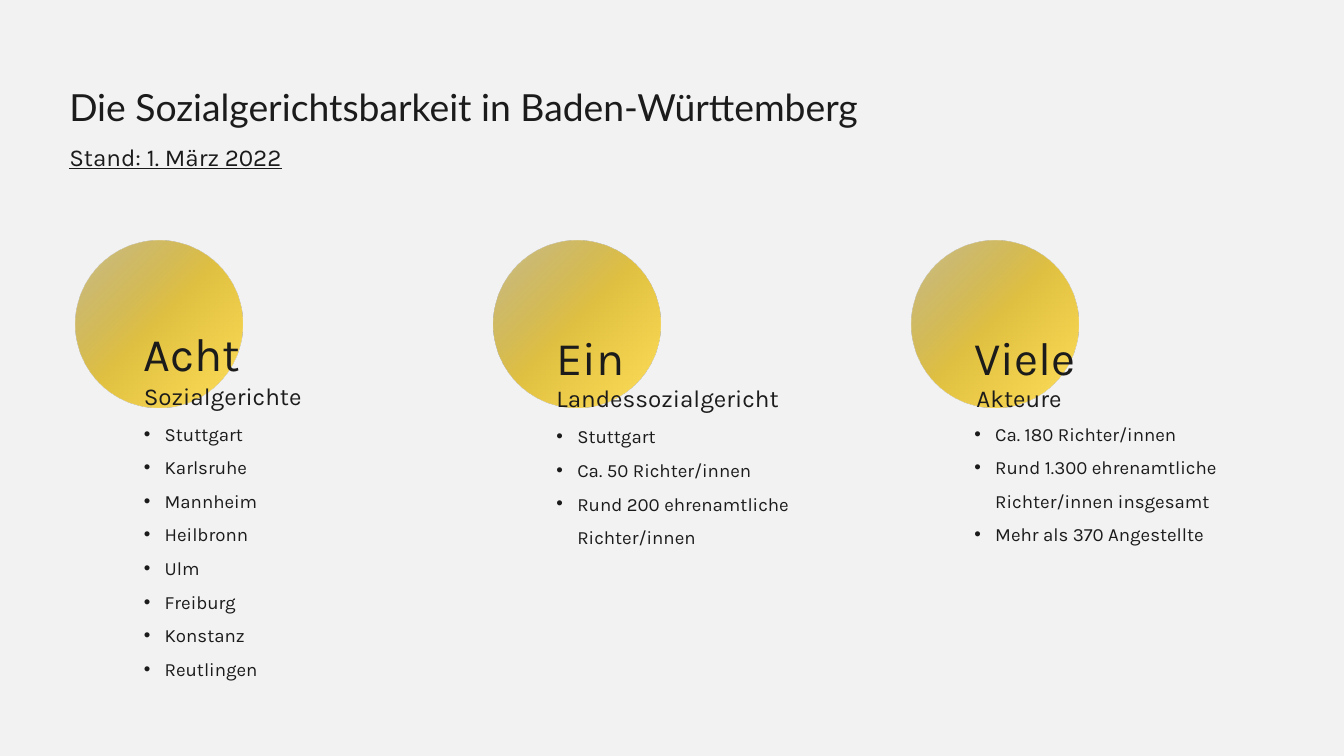
"""Build the slide on the social courts of Baden-Württemberg."""
from lxml import etree
from pptx import Presentation
from pptx.dml.color import RGBColor
from pptx.enum.shapes import MSO_SHAPE
from pptx.enum.text import MSO_ANCHOR, MSO_AUTO_SIZE, PP_ALIGN
from pptx.oxml import parse_xml
from pptx.oxml.ns import nsdecls, qn
from pptx.util import Pt

OVAL = MSO_SHAPE.OVAL
TOP = MSO_ANCHOR.TOP
NO_AUTOFIT = MSO_AUTO_SIZE.NONE
LEFT = PP_ALIGN.LEFT
COMPARISON_LAYOUT = 4
INDENT = 22.3
COLUMN_WIDTH = 273.6
COLUMN_STEP = 448.2

COLUMNS = [
    {"number": ("Acht", 154.1, 348.5), "label": ("Sozialgerichte", 154.1, 405.4),
     "list": (2, 154.1, 440.6, 286.6),
     "items": ["Stuttgart", "Karlsruhe", "Mannheim", "Heilbronn",
               "Ulm", "Freiburg", "Konstanz", "Reutlingen"]},
    {"number": ("Ein", 596.2, 352.8), "label": ("Landessozialgericht", 596.2, 408.2),
     "list": (4, 596.2, 443.5, 145.4),
     "items": ["Stuttgart", "Ca. 50 Richter/innen",
               "Rund 200 ehrenamtliche Richter/innen"]},
    {"number": ("Viele", 1044, 352.8), "label": ("Akteure", 1046.2, 408.2),
     "list": (3, 1044, 440.6, 145.4),
     "items": ["Ca. 180 Richter/innen",
               "Rund 1.300 ehrenamtliche Richter/innen insgesamt",
               "Mehr als 370 Angestellte"]},
]


def color(value):
    return RGBColor.from_string(value)


def write(shape, *texts, size, spacing, font="Karla", underline=False, bullet=False):
    frame = shape.text_frame
    frame.word_wrap = True
    frame.auto_size = NO_AUTOFIT
    frame.vertical_anchor = TOP
    frame.margin_left = frame.margin_top = frame.margin_right = frame.margin_bottom = 0
    for index, text in enumerate(texts):
        paragraph = frame.add_paragraph() if index else frame.paragraphs[0]
        paragraph.alignment = LEFT
        paragraph.line_spacing = spacing
        paragraph.space_before = paragraph.space_after = Pt(0)
        run = paragraph.add_run()
        run.text = text
        run.font.name = font
        run.font.size = Pt(size)
        run.font.bold = False
        run.font.underline = underline
        run.font.color.rgb = color("1B1B1B")
        if bullet:
            properties = paragraph._p.get_or_add_pPr()
            properties.set("marL", str(Pt(INDENT)))
            properties.set("indent", str(-Pt(INDENT)))
            etree.SubElement(properties, qn("a:buFont"), typeface="Arial")
            etree.SubElement(properties, qn("a:buChar"), char="•")


class SlideBuilder:
    def __init__(self, presentation):
        self.slide = presentation.slides.add_slide(
            presentation.slide_layouts[COMPARISON_LAYOUT])
        background = self.slide.background.fill
        background.solid()
        background.fore_color.rgb = color("F2F2F2")

    def placeholder(self, index, left, top, width, height, *texts, **style):
        shape = self.slide.placeholders[index]
        shape.left, shape.top = Pt(left), Pt(top)
        shape.width, shape.height = Pt(width), Pt(height)
        write(shape, *texts, **style)

    def text(self, text, left, top, width, height, **style):
        shape = self.slide.shapes.add_textbox(Pt(left), Pt(top), Pt(width), Pt(height))
        write(shape, text, **style)

    def circle(self, left, top, diameter):
        shape = self.slide.shapes.add_shape(
            OVAL, Pt(left), Pt(top), Pt(diameter), Pt(diameter))
        shape.shadow.inherit = False
        shape.line.fill.background()
        gradient = parse_xml(
            f'<a:gradFill {nsdecls("a")} rotWithShape="1"><a:gsLst>'
            '<a:gs pos="0"><a:srgbClr val="AA9231"><a:alpha val="52000"/></a:srgbClr></a:gs>'
            '<a:gs pos="50000"><a:srgbClr val="E1C141"/></a:gs>'
            '<a:gs pos="100000"><a:srgbClr val="FFDE59"/></a:gs></a:gsLst>'
            '<a:path path="circle"><a:fillToRect r="100000" b="100000"/></a:path>'
            '</a:gradFill>')
        shape._element.spPr.insert(2, gradient)
        self.slide.shapes._spTree.insert(2, shape._element)


def main():
    presentation = Presentation()
    presentation.slide_width, presentation.slide_height = Pt(1440), Pt(810)
    builder = SlideBuilder(presentation)
    builder.placeholder(0, 74.2, 41.8, 1316.9, 85,
                        "Die Sozialgerichtsbarkeit in Baden-Württemberg",
                        size=40, spacing=Pt(96), font="Lato")
    builder.placeholder(1, 74.2, 149.8, 879.8, 32.4, "Stand: 1. März 2022",
                        size=26, spacing=Pt(33.8), underline=True)
    for position, column in enumerate(COLUMNS):
        builder.circle(80.6 + position * COLUMN_STEP, 257.8, 179)
        index, left, top, height = column["list"]
        builder.placeholder(index, left, top, COLUMN_WIDTH, height, *column["items"],
                            size=20, spacing=1.5, bullet=True)
        builder.text(*column["number"], COLUMN_WIDTH, 59.8, size=50, spacing=Pt(60))
        builder.text(*column["label"], COLUMN_WIDTH, 32.4, size=26, spacing=Pt(33.8))
    presentation.save("out.pptx")


if __name__ == "__main__":
    main()
